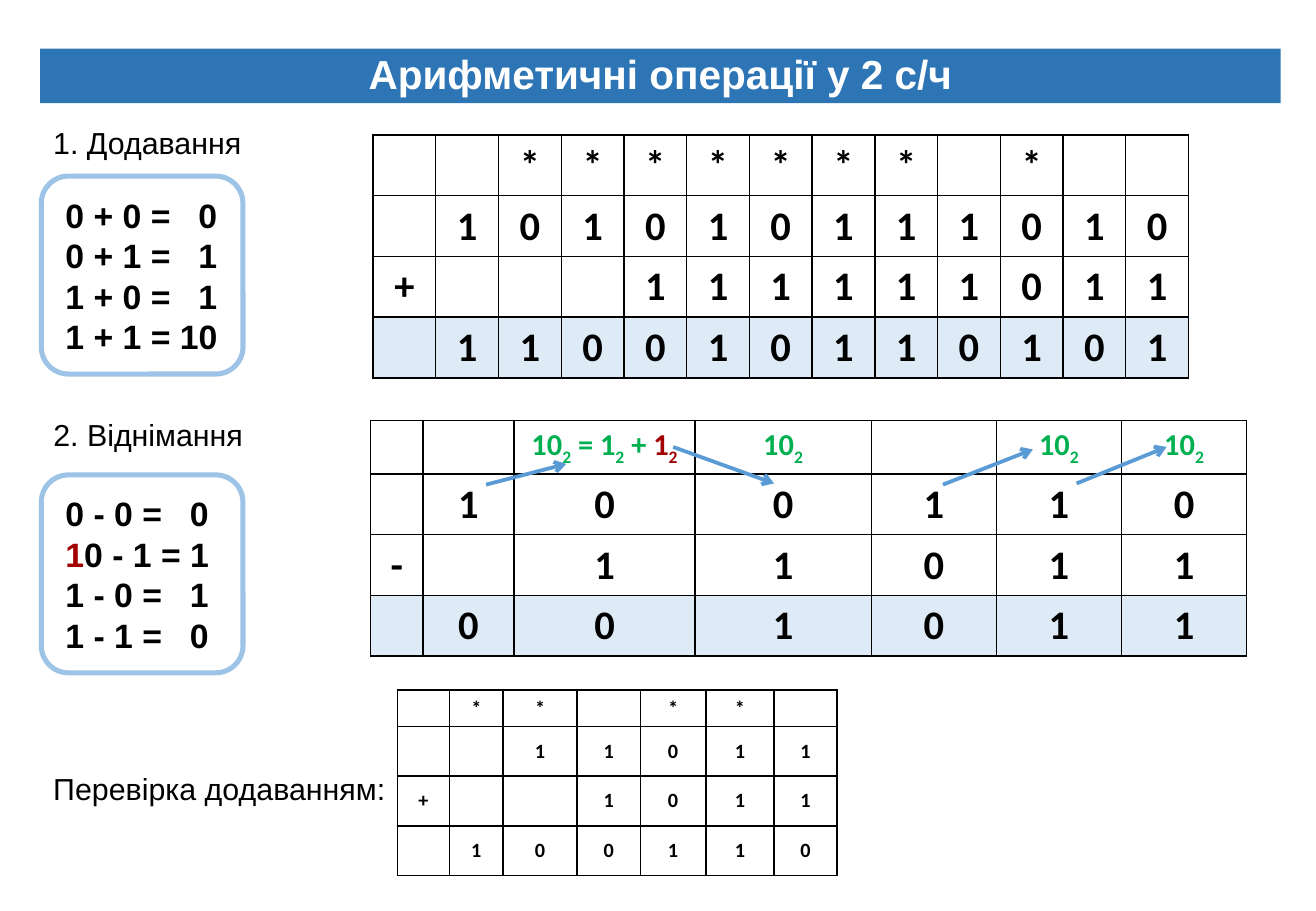
import pptx
import pptx.util
import pptx.dml.color
import pptx.enum.shapes
import pptx.enum.text
import pptx.oxml

Inches = pptx.util.Inches
Pt = pptx.util.Pt
Align = pptx.enum.text.PP_ALIGN
Anchor = pptx.enum.text.MSO_ANCHOR
Form = pptx.enum.shapes.MSO_SHAPE
NS = 'xmlns:a="http://schemas.openxmlformats.org/drawingml/2006/main"'
HUES = {
    "black": "000000", "white": "FFFFFF", "bar": "2E75B6", "frame": "9DC3E6",
    "arrow": "5B9BD5", "sum": "DEEBF7", "green": "00B050", "red": "A20000",
}


def hue(name):
    return pptx.dml.color.RGBColor.from_string(HUES[name])


def put(item, vals):
    for key, val in vals.items():
        setattr(item, key, val)


class Board:
    def __init__(self, deck):
        self.slide = deck.slides.add_slide(deck.slide_layouts[6])
        self.shapes = self.slide.shapes
        self.head = {"name": "Arial", "size": Pt(24), "bold": True}
        self.label = {"name": "Arial", "size": Pt(18), "bold": False}
        self.rule = {"name": "Arial", "size": Pt(20), "bold": True}
        self.digit = {"name": "Calibri", "bold": True}

    def ink(self, para, text, style, color="black"):
        runs = [(text, color, False)] if isinstance(text, str) else text
        for part, tint, low in runs:
            run = para.add_run()
            run.text = part
            put(run.font, style)
            run.font.color.rgb = hue(tint)
            if low:
                run.font._element.set("baseline", "-25000")

    def shape(self, form, box):
        item = self.shapes.add_shape(form, *map(Inches, box))
        item.shadow.inherit = False
        return item

    def title(self, text, box):
        bar = self.shape(Form.RECTANGLE, box)
        bar.fill.solid()
        bar.fill.fore_color.rgb = hue("bar")
        bar.line.fill.background()
        frame = bar.text_frame
        put(frame, {
            "vertical_anchor": Anchor.BOTTOM, "word_wrap": True,
            "margin_left": Inches(0.08), "margin_right": Inches(0.08),
            "margin_top": Inches(0.04), "margin_bottom": Inches(0.04),
        })
        para = frame.paragraphs[0]
        put(para, {"alignment": Align.CENTER, "line_spacing": 0.9})
        self.ink(para, text, self.head, "white")

    def text(self, lines, box, style, wrap, stop=0):
        frame = self.shapes.add_textbox(*map(Inches, box)).text_frame
        frame.word_wrap = wrap
        for num, line in enumerate(lines):
            para = frame.add_paragraph() if num else frame.paragraphs[0]
            if "\t" in line:
                para._p.get_or_add_pPr().append(pptx.oxml.parse_xml(
                    f'<a:tabLst {NS}><a:tab pos="{Inches(stop)}" algn="r"/></a:tabLst>'))
            self.ink(para, line, style)

    def rules(self, lines, top, stop):
        card = self.shape(Form.ROUNDED_RECTANGLE, (0.34, top, 1.66, 1.63))
        card.adjustments[0] = 0.137
        card.fill.background()
        card.line.width = Pt(3)
        card.line.color.rgb = hue("frame")
        self.text(lines, (0.44, top + 0.1, 1.56, 1.45), self.rule, True, stop)

    def cell(self, cell, text, size, anchor, shade):
        cell.vertical_anchor = anchor
        props = cell._tc.get_or_add_tcPr()
        for side in "LRTB":
            props.append(pptx.oxml.parse_xml(
                f'<a:ln{side} {NS} w="{Pt(1)}"><a:solidFill>'
                f'<a:srgbClr val="{HUES["black"]}"/></a:solidFill></a:ln{side}>'))
        if shade:
            cell.fill.solid()
            cell.fill.fore_color.rgb = hue("sum")
        else:
            cell.fill.background()
        para = cell.text_frame.paragraphs[0]
        para.alignment = Align.CENTER
        if text == " ":
            para._p.get_or_add_endParaRPr().set("sz", str(size * 100))
        else:
            self.ink(para, text, {**self.digit, "size": Pt(size)})

    def table(self, rows, spot, wide, high, sizes, anchor=Anchor.MIDDLE, shade=True):
        box = (*spot, sum(wide), sum(high))
        grid = self.shapes.add_table(len(rows), len(wide), *map(Inches, box)).table
        put(grid, {"first_row": False, "horz_banding": False})
        for col, size in zip(grid.columns, wide):
            col.width = Inches(size)
        for r, row in enumerate(rows):
            grid.rows[r].height = Inches(high[r])
            for c, text in enumerate(row):
                last = shade and r == len(rows) - 1
                self.cell(grid.cell(r, c), text, sizes[r], anchor, last)

    def arrow(self, start, end):
        kind = pptx.enum.shapes.MSO_CONNECTOR.STRAIGHT
        link = self.shapes.add_connector(kind, *map(Inches, start + end))
        link.line.width = Pt(2.25)
        link.line.color.rgb = hue("arrow")
        link.line._get_or_add_ln().append(
            pptx.oxml.parse_xml(f'<a:tailEnd {NS} type="arrow"/>'))
        link._element.spPr.append(pptx.oxml.parse_xml(f"<a:effectLst {NS}/>"))


deck = pptx.Presentation()
put(deck, {"slide_width": Inches(10.83), "slide_height": Inches(7.5)})
board = Board(deck)
board.title("Арифметичні операції у 2 с/ч", (0.33, 0.4, 10.21, 0.45))

for label, top, width in (
    ("1. Додавання", 0.97, 1.77),
    ("2. Віднімання", 3.38, 1.78),
    ("Перевірка додаванням:", 6.29, 2.97),
):
    board.text([label], (0.34, top, width, 0.4), board.label, False)

board.rules(["0 + 0 =\t0", "0 + 1 =\t1", "1 + 0 =\t1", "1 + 1 = 10"], 1.45, 1.25)
borrow = [("1", "red", False), ("0 - 1 = 1", "black", False)]
board.rules(["0 - 0 =\t0", borrow, "1 - 0 =\t1", "1 - 1 =\t0"], 3.91, 1.18)

board.table(
    ["  ******* *  ", " 101010111010", "+   111111011", " 110010110101"],
    (3.07, 1.11), [6.71 / 13] * 13, [0.5] * 4, [24] * 4, Anchor.TOP)

ten = [("10", "green", False), ("2", "green", True)]
split = ten + [
    (" = 1", "green", False), ("2", "green", True), (" + ", "green", False),
    ("1", "red", False), ("2", "red", True),
]
board.table(
    [[" ", " ", split, ten, " ", ten, ten], " 100110", "- 11011", " 001011"],
    (3.05, 3.46), [0.43, 0.75, 1.49, 1.45, 1.03, 1.03, 1.03],
    [0.44, 0.5, 0.5, 0.5], [18, 24, 24, 24])

for start, end in (
    ((8.86, 3.98), (9.6, 3.68)),
    ((7.76, 3.99), (8.5, 3.7)),
    ((4, 3.99), (4.66, 3.82)),
    ((5.54, 3.68), (6.37, 3.98)),
):
    board.arrow(start, end)

board.table(
    [" ** ** ", "  11011", "+  1011", " 100110"],
    (3.27, 5.68), [0.43, 0.44, 0.61, 0.52, 0.54, 0.56, 0.52],
    [0.3, 0.41, 0.41, 0.41], [12] * 4, shade=False)

deck.save("out.pptx")
